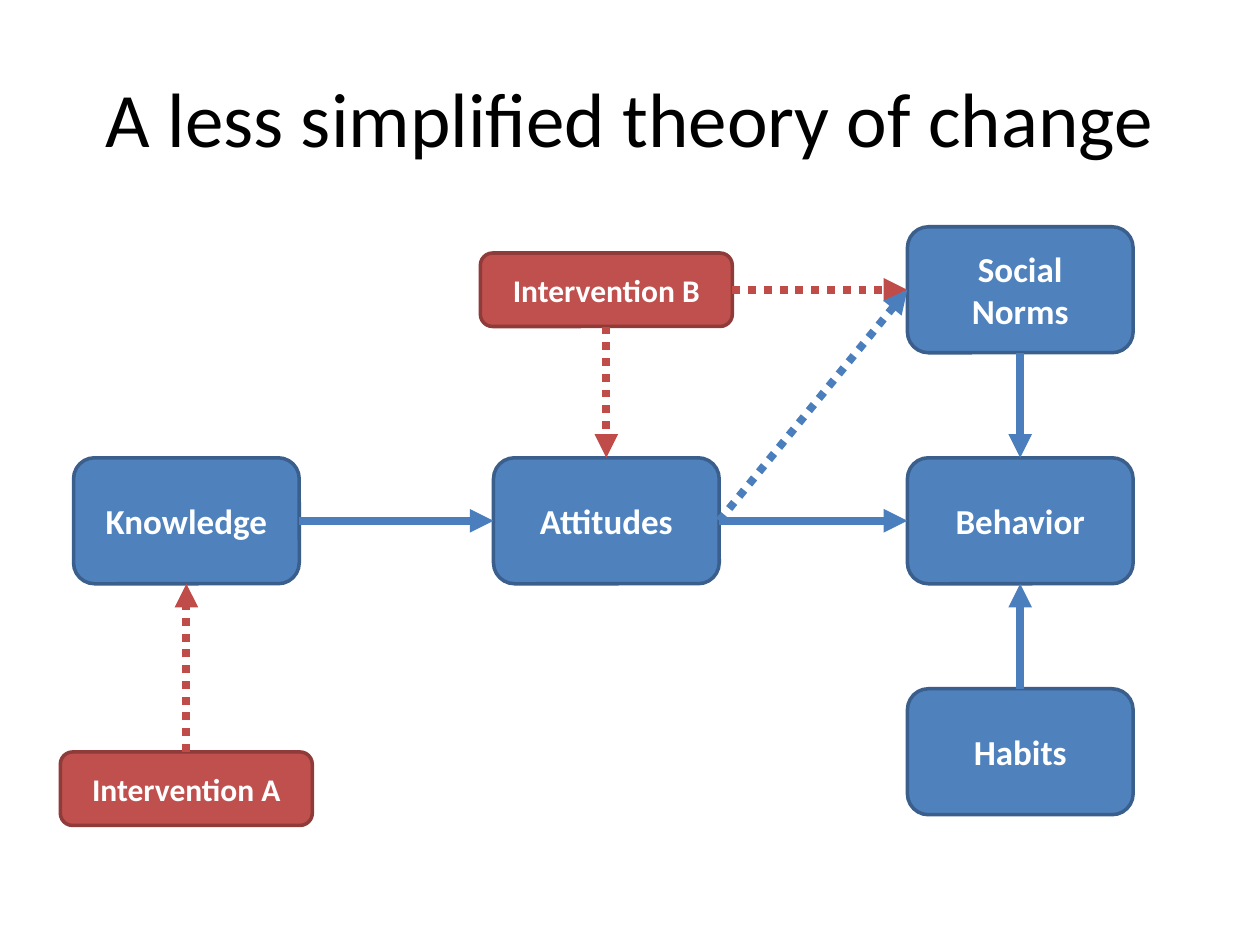
"""Build a slide showing a theory of change as boxes and arrows."""
from lxml import etree
from pptx import Presentation
from pptx.dml.color import RGBColor
from pptx.enum.dml import MSO_LINE
from pptx.enum.shapes import MSO_CONNECTOR, MSO_SHAPE
from pptx.enum.text import MSO_ANCHOR, PP_ALIGN
from pptx.oxml.ns import qn
from pptx.util import Pt

ROUNDED = MSO_SHAPE.ROUNDED_RECTANGLE
STRAIGHT = MSO_CONNECTOR.STRAIGHT
DOTTED = MSO_LINE.ROUND_DOT
MIDDLE = MSO_ANCHOR.MIDDLE
CENTER = PP_ALIGN.CENTER
TOP, LEFT, BOTTOM, RIGHT = range(4)

FONT = "Calibri"
COLORS = {
    "factor": "4F81BD", "factor edge": "3A5F8C", "factor arrow": "4B7EBC",
    "intervention": "C0504D", "intervention edge": "8E3B39", "intervention arrow": "BF4C48",
    "title": "000000", "label": "FFFFFF",
}
STYLES = {"factor": (129, 72, 20), "intervention": (144, 42, 18)}
COLUMNS = (106.5, 346.5, 583)
ROWS = (165.6, 297.6, 429.6)


def color(name):
    return RGBColor.from_string(COLORS[name])


def write(frame, text, size, color_name, bold):
    frame.word_wrap = True
    frame.vertical_anchor = MIDDLE
    para = frame.paragraphs[0]
    para.alignment = CENTER
    span = para.add_run()
    span.text = text
    span.font.name = FONT
    span.font.size = Pt(size)
    span.font.bold = bold
    span.font.color.rgb = color(color_name)


deck = Presentation()
deck.slide_width, deck.slide_height = Pt(720), Pt(540)
page = deck.slides.add_slide(deck.slide_layouts[5])

title = page.shapes.title
title.left, title.top, title.width, title.height = Pt(36), Pt(21.6), Pt(648), Pt(90)
write(title.text_frame, "A less simplified theory of change", 44, "title", False)

nodes = [
    ("Knowledge", "factor", COLUMNS[0], ROWS[1]),
    ("Attitudes", "factor", COLUMNS[1], ROWS[1]),
    ("Behavior", "factor", COLUMNS[2], ROWS[1]),
    ("Social Norms", "factor", COLUMNS[2], ROWS[0]),
    ("Habits", "factor", COLUMNS[2], ROWS[2]),
    ("Intervention A", "intervention", COLUMNS[0], 450.7),
    ("Intervention B", "intervention", COLUMNS[1], ROWS[0]),
]
boxes = {}
for name, kind, center_x, center_y in nodes:
    width, height, size = STYLES[kind]
    box = page.shapes.add_shape(
        ROUNDED, Pt(center_x - width / 2), Pt(center_y - height / 2), Pt(width), Pt(height))
    box.shadow.inherit = False
    box.fill.solid()
    box.fill.fore_color.rgb = color(kind)
    box.line.color.rgb = color(f"{kind} edge")
    box.line.width = Pt(2)
    box.text_frame.margin_left = box.text_frame.margin_right = Pt(10)
    write(box.text_frame, name, size, "label", True)
    boxes[name] = box

links = [
    ("Knowledge", RIGHT, "Attitudes", LEFT, "factor", False),
    ("Attitudes", RIGHT, "Behavior", LEFT, "factor", False),
    ("Social Norms", BOTTOM, "Behavior", TOP, "factor", False),
    ("Habits", TOP, "Behavior", BOTTOM, "factor", False),
    ("Intervention A", TOP, "Knowledge", BOTTOM, "intervention", True),
    ("Intervention B", RIGHT, "Social Norms", LEFT, "intervention", True),
    ("Attitudes", RIGHT, "Social Norms", LEFT, "factor", True),
    ("Intervention B", BOTTOM, "Attitudes", TOP, "intervention", True),
]
for source, source_side, target, target_side, kind, dotted in links:
    arrow = page.shapes.add_connector(STRAIGHT, 0, 0, 0, 0)
    arrow.begin_connect(boxes[source], source_side)
    arrow.end_connect(boxes[target], target_side)
    arrow.line.color.rgb = color(f"{kind} arrow")
    arrow.line.width = Pt(4.5)
    if dotted:
        arrow.line.dash_style = DOTTED
    properties = arrow.element.spPr
    etree.SubElement(properties.find(qn("a:ln")), qn("a:tailEnd"), type="triangle")
    etree.SubElement(properties, qn("a:effectLst"))

deck.save("out.pptx")
